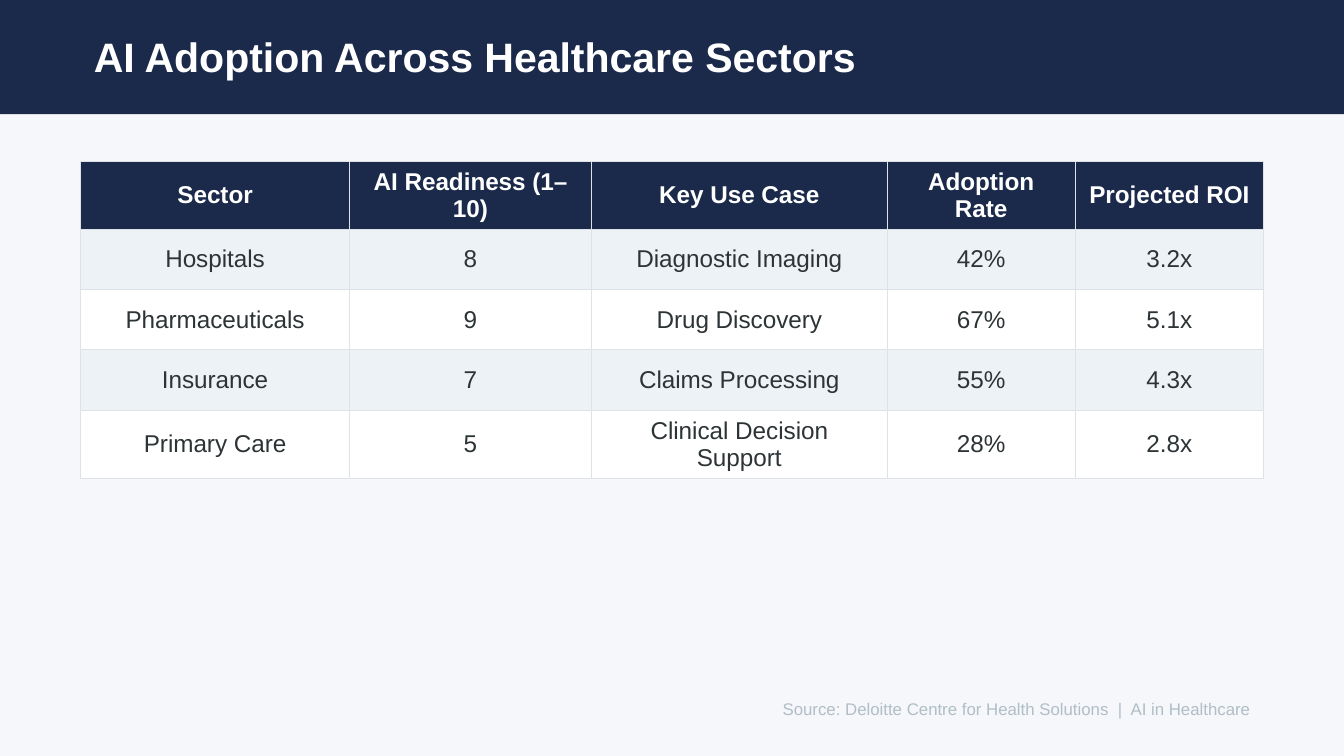
from dataclasses import dataclass

from lxml.etree import SubElement
from pptx import Presentation
from pptx.dml.color import RGBColor
from pptx.enum.shapes import MSO_SHAPE
from pptx.enum.text import MSO_ANCHOR, PP_ALIGN
from pptx.oxml.ns import qn
from pptx.slide import Slide
from pptx.table import _Cell
from pptx.util import Inches, Length, Pt

COLORS = {
    "background": "F5F7FA",
    "navy": "1B2A4A",
    "white": "FFFFFF",
    "stripe": "EDF2F7",
    "ink": "2D3436",
    "border": "DEE2E6",
    "source": "B0BEC5",
}
FONT = "Arial"
COLUMN, ROW = 0.2, 0.05  # inches per grid step
PAGE_COLUMNS, MARGIN = 50, 3
CONTENT_COLUMNS = PAGE_COLUMNS - 2 * MARGIN

TABLE_TOP, TABLE_ROW = 24, 9
CELL_PADDING = Pt(2.5)
SECTOR_COLUMNS = (10, 9, 11, 7, 7)
SECTOR_ROWS = (
    ("Sector", "AI Readiness (1–10)", "Key Use Case", "Adoption Rate", "Projected ROI"),
    ("Hospitals", "8", "Diagnostic Imaging", "42%", "3.2x"),
    ("Pharmaceuticals", "9", "Drug Discovery", "67%", "5.1x"),
    ("Insurance", "7", "Claims Processing", "55%", "4.3x"),
    ("Primary Care", "5", "Clinical Decision Support", "28%", "2.8x"),
)


@dataclass(frozen=True)
class TextStyle:
    size: float
    color: str
    bold: bool = False
    align: PP_ALIGN = PP_ALIGN.LEFT


@dataclass(frozen=True)
class Label:
    text: str
    top: float
    rows: float
    style: TextStyle


LABELS = (
    Label("AI Adoption Across Healthcare Sectors", 2.4, 12,
          TextStyle(22, "white", bold=True)),
    Label("Source: Deloitte Centre for Health Solutions  |  AI in Healthcare", 103, 5,
          TextStyle(9, "source", align=PP_ALIGN.RIGHT)),
)
HEADER_STYLE = TextStyle(13, "white", bold=True, align=PP_ALIGN.CENTER)
BODY_STYLE = TextStyle(13, "ink", align=PP_ALIGN.CENTER)


def across(columns: float) -> Length:
    return Inches(columns * COLUMN)


def down(rows: float) -> Length:
    return Inches(rows * ROW)


def rgb(name: str) -> RGBColor:
    return RGBColor.from_string(COLORS[name])


def write(holder, text: str, style: TextStyle) -> None:
    """Fill a text box or table cell with one styled paragraph."""
    para = holder.text_frame.paragraphs[0]
    para.text = text
    para.alignment = style.align
    para.font.name = FONT
    para.font.size = Pt(style.size)
    para.font.bold = style.bold
    para.font.color.rgb = rgb(style.color)


def add_banner(page: Slide) -> None:
    banner = page.shapes.add_shape(
        MSO_SHAPE.RECTANGLE, 0, 0, across(PAGE_COLUMNS), down(17))
    banner.shadow.inherit = False
    banner.fill.solid()
    banner.fill.fore_color.rgb = rgb("navy")
    banner.line.fill.background()


def add_label(page: Slide, label: Label) -> None:
    box = page.shapes.add_textbox(
        across(MARGIN), down(label.top), across(CONTENT_COLUMNS), down(label.rows))
    box.text_frame.word_wrap = True
    box.text_frame.vertical_anchor = MSO_ANCHOR.MIDDLE
    write(box, label.text, label.style)


def add_borders(cell: _Cell) -> None:
    properties = cell._tc.get_or_add_tcPr()
    for side in ("lnL", "lnR", "lnT", "lnB"):
        line = SubElement(properties, qn(f"a:{side}"), w=str(Pt(0.5)))
        fill = SubElement(line, qn("a:solidFill"))
        SubElement(fill, qn("a:srgbClr"), val=COLORS["border"])


def add_sector_table(page: Slide) -> None:
    count = len(SECTOR_ROWS)
    table = page.shapes.add_table(
        count, len(SECTOR_COLUMNS), across(MARGIN), down(TABLE_TOP),
        across(CONTENT_COLUMNS), down(TABLE_ROW * count)).table
    for column, width in zip(table.columns, SECTOR_COLUMNS):
        column.width = across(width)
    for index, values in enumerate(SECTOR_ROWS):
        style = BODY_STYLE if index else HEADER_STYLE
        fill = ("stripe" if index % 2 else "white") if index else "navy"
        for cell, text in zip(table.rows[index].cells, values):
            add_borders(cell)
            cell.fill.solid()
            cell.fill.fore_color.rgb = rgb(fill)
            cell.vertical_anchor = MSO_ANCHOR.MIDDLE
            cell.margin_top = cell.margin_bottom = CELL_PADDING
            write(cell, text, style)


def main() -> None:
    deck = Presentation()
    deck.slide_width = across(PAGE_COLUMNS)
    deck.slide_height = deck.slide_width * 9 // 16
    page = deck.slides.add_slide(deck.slide_layouts[6])
    page.background.fill.solid()
    page.background.fill.fore_color.rgb = rgb("background")
    add_banner(page)
    title, source = LABELS
    add_label(page, title)
    add_sector_table(page)
    add_label(page, source)
    deck.save("out.pptx")


if __name__ == "__main__":
    main()
